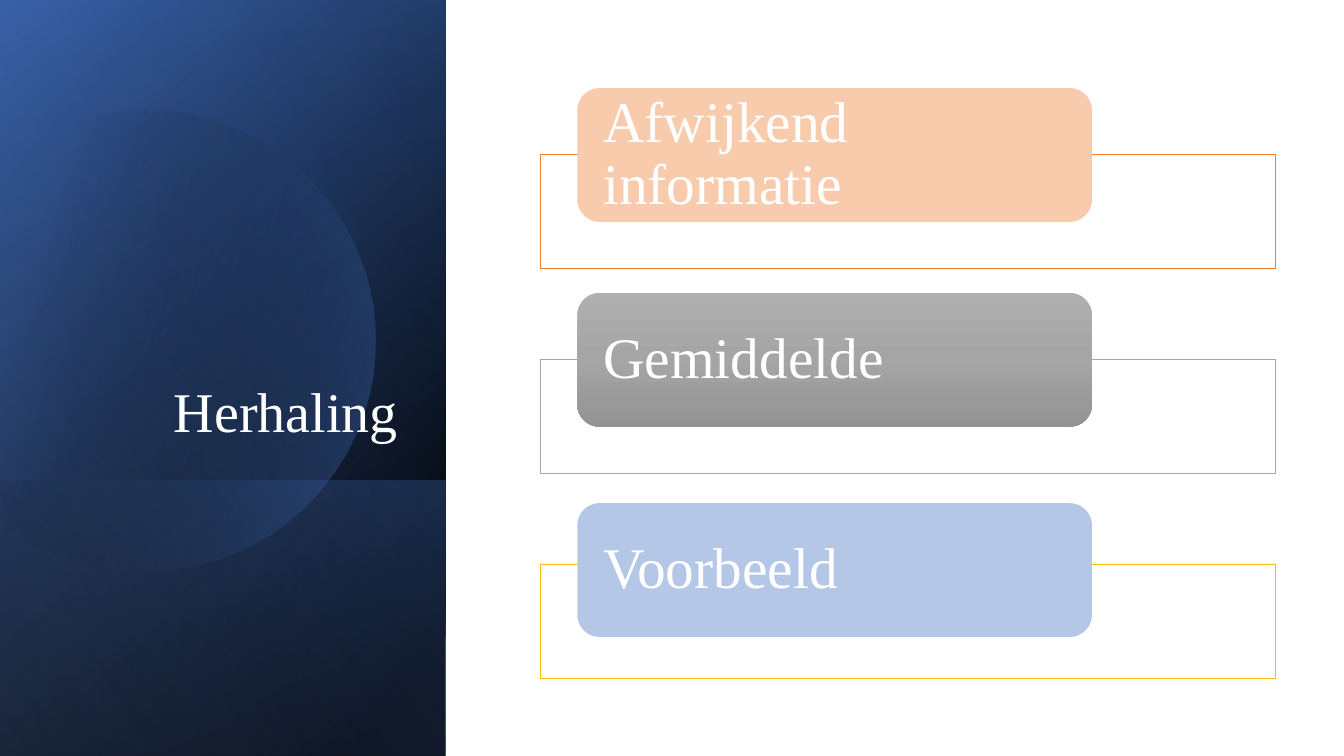
"""Build the Herhaling slide: a dark gradient title panel and three topic cards."""
import math

import pptx
import pptx.util
import pptx.dml.color
import pptx.enum.shapes
import pptx.enum.text
import pptx.oxml
import pptx.oxml.ns
from lxml import etree
from pptx.util import Cm

COLORS = {
    "white": "FFFFFF", "black": "000000", "blue": "4472C4", "navy": "2F5597",
    "sky": "8FAADC", "orange": "ED7D31", "peach": "F8CBAD", "gray": "A5A5A5",
    "light_gray": "AFAFAF", "dark_gray": "939393", "gold": "FFC000",
    "pale_blue": "B4C7E7",
}
FONT = "Times New Roman"
PANEL_W, PANEL_H = 11.23, 19.05
SHAPES = pptx.enum.shapes.MSO_SHAPE
ALIGN = pptx.enum.text.PP_ALIGN
ANCHOR = pptx.enum.text.MSO_ANCHOR


def rgb(name):
    """Return the named colour."""
    return pptx.dml.color.RGBColor.from_string(COLORS[name])


def set_gradient(sp, stops, angle):
    """Fill a shape with (position, colour, opacity) stops, all in percent."""
    sp.fill.gradient()
    grad = sp.element.spPr.find(pptx.oxml.ns.qn("a:gradFill"))
    for child in list(grad):
        grad.remove(child)
    gs_lst = etree.SubElement(grad, pptx.oxml.ns.qn("a:gsLst"))
    for pos, name, opacity in stops:
        gs = etree.SubElement(gs_lst, pptx.oxml.ns.qn("a:gs"), pos=str(pos * 1000))
        clr = etree.SubElement(gs, pptx.oxml.ns.qn("a:srgbClr"), val=COLORS[name])
        if opacity < 100:
            etree.SubElement(clr, pptx.oxml.ns.qn("a:alpha"), val=str(opacity * 1000))
    etree.SubElement(grad, pptx.oxml.ns.qn("a:lin"), ang=str(angle * 60000), scaled="0")


def add_panel(s, top, height, stops, angle):
    """Add a gradient rectangle across the left panel, turned a quarter and flipped."""
    left = (PANEL_W - height) / 2
    sp = s.shapes.add_shape(SHAPES.RECTANGLE, Cm(left), Cm(top - left),
                            Cm(height), Cm(PANEL_W))
    sp.rotation = 90
    sp.element.spPr.find(pptx.oxml.ns.qn("a:xfrm")).set("flipH", "1")
    sp.shadow.inherit = False
    sp.line.fill.background()
    set_gradient(sp, stops, angle)


def add_disc(s, cx, cy, radius, stops, angle):
    """Add a disc that is cut off straight at the slide's left edge."""
    cut = math.degrees(math.acos(-cx / radius))
    sp = s.shapes.add_shape(SHAPES.CHORD, Cm(cx - radius), Cm(cy - radius),
                            Cm(2 * radius), Cm(2 * radius))
    sp.adjustments[0] = (360 - cut) * 0.6
    sp.adjustments[1] = cut * 0.6
    sp.shadow.inherit = False
    sp.line.fill.background()
    set_gradient(sp, stops, angle)


def write_text(sp, text, size, align, anchor, inset_x, inset_y):
    """Write one white paragraph into a shape."""
    tf = sp.text_frame
    tf.word_wrap = True
    tf.vertical_anchor = anchor
    tf.margin_left = tf.margin_right = Cm(inset_x)
    tf.margin_top = tf.margin_bottom = Cm(inset_y)
    p = tf.paragraphs[0]
    p.alignment = align
    p.line_spacing = 0.9
    r = p.add_run()
    r.text = text
    r.font.size = pptx.util.Pt(size)
    r.font.name = FONT
    r.font.color.rgb = rgb("white")


def add_frame(s, top, line):
    """Add the thin outlined rectangle behind a card."""
    sp = s.shapes.add_shape(SHAPES.RECTANGLE, Cm(13.61), Cm(top), Cm(18.52), Cm(2.87))
    sp.shadow.inherit = False
    sp.fill.solid()
    sp.fill.fore_color.rgb = rgb("white")
    sp.line.color.rgb = rgb(line)
    sp.line.width = pptx.util.Pt(0.5)


def add_card(s, top, text, fill):
    """Add a rounded card; fill is a colour name or a list of gradient stops."""
    sp = s.shapes.add_shape(SHAPES.ROUNDED_RECTANGLE, Cm(14.55), Cm(top),
                            Cm(12.97), Cm(3.37))
    sp.shadow.inherit = False
    sp.line.fill.background()
    if isinstance(fill, str):
        sp.fill.solid()
        sp.fill.fore_color.rgb = rgb(fill)
    else:
        set_gradient(sp, fill, 90)
    write_text(sp, text, 41, ALIGN.LEFT, ANCHOR.MIDDLE, 0.49, 0)


def main():
    """Build and save the slide."""
    prs = pptx.Presentation()
    prs.slide_width, prs.slide_height = Cm(33.87), Cm(PANEL_H)
    s = prs.slides.add_slide(prs.slide_layouts[6])

    add_panel(s, 0, PANEL_H, [(8, "black", 100), (100, "navy", 100)], 50)
    add_panel(s, 0, PANEL_H, [(0, "black", 0), (99, "blue", 46)], 30)
    add_panel(s, 12.11, 6.94, [(2, "blue", 29), (100, "black", 30)], 130)
    add_disc(s, 3.65, 8.59, 5.82, [(29, "black", 0), (100, "blue", 43)], 14)
    add_panel(s, 0, PANEL_H, [(0, "black", 0), (99, "sky", 11)], 120)

    title = s.shapes.add_textbox(Cm(1.62), Cm(4.69), Cm(8.65), Cm(6.65))
    write_text(title, "Herhaling", 40, ALIGN.RIGHT, ANCHOR.BOTTOM, 0.25, 0.13)

    gray_stops = [(0, "light_gray", 100), (50, "gray", 100), (100, "dark_gray", 100)]
    topics = [
        ("Afwijkend informatie", "orange", "peach", 2.22),
        ("Gemiddelde", "gray", gray_stops, 7.38),
        ("Voorbeeld", "gold", "pale_blue", 12.68),
    ]
    for i, (text, line, fill, card_top) in enumerate(topics):
        add_frame(s, 3.9 + i * 5.16, line)
        add_card(s, card_top, text, fill)

    prs.save("out.pptx")


if __name__ == "__main__":
    main()
